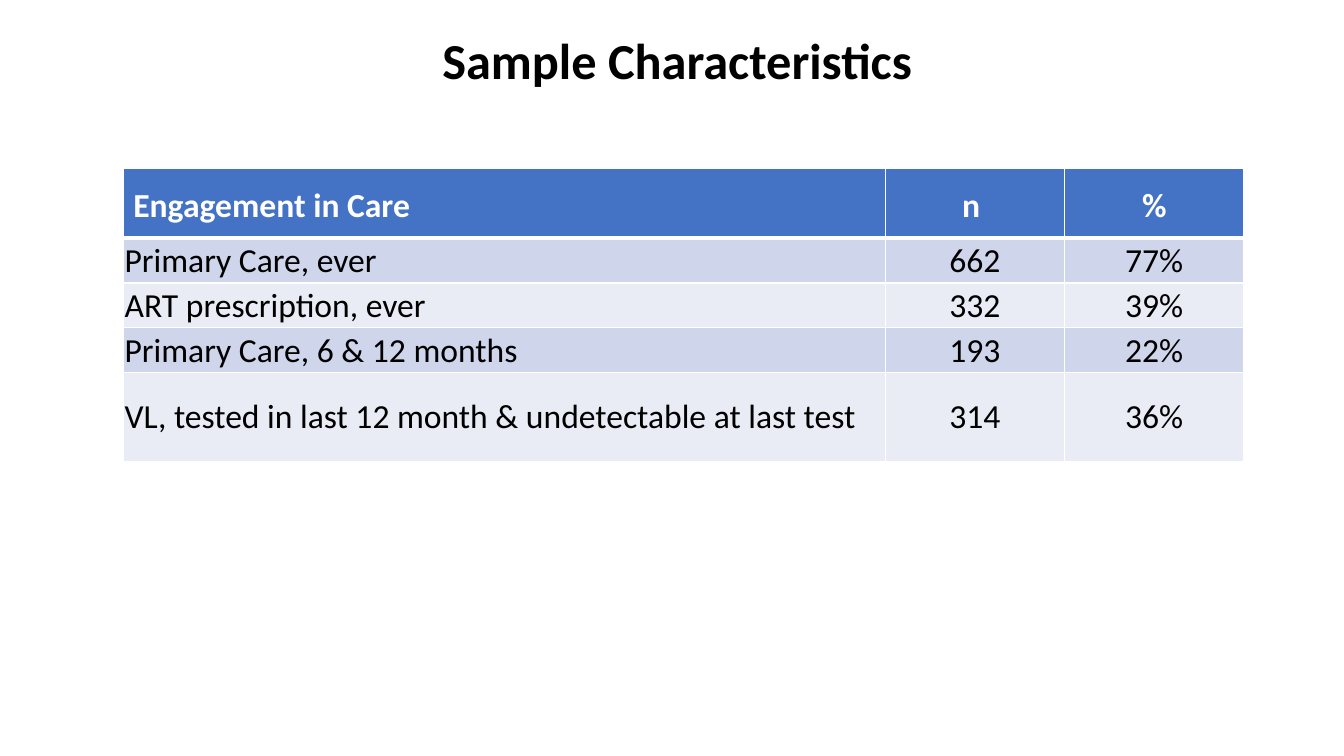
from dataclasses import dataclass

import lxml.etree
import pptx
import pptx.dml.color
import pptx.enum.text
import pptx.oxml.ns
import pptx.util

Cm = pptx.util.Cm
Pt = pptx.util.Pt
ALIGN = pptx.enum.text.PP_ALIGN
MIDDLE = pptx.enum.text.MSO_ANCHOR.MIDDLE

FONT = "Calibri"
BLACK, WHITE = "000000", "FFFFFF"


@dataclass(frozen=True)
class RowStyle:
    fill: str
    color: str
    bold: bool
    side_margin: float
    top_margin: float
    line_spacing: float
    bottom_border: float


@dataclass(frozen=True)
class TableRow:
    texts: tuple[str, str, str]
    height: float
    style: RowStyle


HEADER = RowStyle("4472C4", WHITE, True, 0.25, 0, 1.15, 3)
DARK_BAND = RowStyle("CFD5EA", BLACK, False, 0.03, 0.03, 1, 1)
LIGHT_BAND = RowStyle("E9EBF5", BLACK, False, 0.03, 0.03, 1, 1)

COLUMN_WIDTHS = (19.2, 4.52, 4.52)
ROWS = (
    TableRow(("Engagement in Care", "n ", "%"), 1.75, HEADER),
    TableRow(("Primary Care, ever", "662", "77%"), 1.13, DARK_BAND),
    TableRow(("ART prescription, ever", "332", "39%"), 1.13, LIGHT_BAND),
    TableRow(("Primary Care, 6 & 12 months", "193", "22%"), 1.13, DARK_BAND),
    TableRow(("VL, tested in last 12 month & undetectable at last test", "314", "36%"),
             2.24, LIGHT_BAND),
)


def rgb(color: str) -> pptx.dml.color.RGBColor:
    return pptx.dml.color.RGBColor.from_string(color)


def add_run(paragraph, text: str, size: float, color: str, bold: bool) -> None:
    run = paragraph.add_run()
    run.text = text
    run.font.name = FONT
    run.font.size = Pt(size)
    run.font.bold = bold
    run.font.color.rgb = rgb(color)


def add_border(cell, side: str, width: float) -> None:
    qn = pptx.oxml.ns.qn
    properties = cell._tc.get_or_add_tcPr()
    line = lxml.etree.SubElement(properties, qn(f"a:ln{side}"), w=str(Pt(width)))
    fill = lxml.etree.SubElement(line, qn("a:solidFill"))
    lxml.etree.SubElement(fill, qn("a:srgbClr"), val=WHITE)


def fill_cell(cell, text: str, style: RowStyle, alignment) -> None:
    for side in "LRT":
        add_border(cell, side, 1)
    add_border(cell, "B", style.bottom_border)
    cell.fill.solid()
    cell.fill.fore_color.rgb = rgb(style.fill)
    cell.vertical_anchor = MIDDLE
    cell.margin_left = cell.margin_right = Cm(style.side_margin)
    cell.margin_top = Cm(style.top_margin)
    cell.margin_bottom = 0
    paragraph = cell.text_frame.paragraphs[0]
    paragraph.alignment = alignment
    paragraph.line_spacing = style.line_spacing
    add_run(paragraph, text, 24, style.color, style.bold)


def add_title(slide, text: str) -> None:
    shape = slide.shapes.add_textbox(Cm(0.84), 0, Cm(32.46), Cm(3.18))
    frame = shape.text_frame
    frame.word_wrap = True
    frame.vertical_anchor = MIDDLE
    paragraph = frame.paragraphs[0]
    paragraph.alignment = ALIGN.CENTER
    paragraph.line_spacing = 0.9
    add_run(paragraph, text, 36, BLACK, True)


def add_care_table(slide) -> None:
    width = Cm(sum(COLUMN_WIDTHS))
    height = Cm(sum(row.height for row in ROWS))
    table = slide.shapes.add_table(
        len(ROWS), len(COLUMN_WIDTHS), Cm(3.11), Cm(4.25), width, height).table
    for column, column_width in zip(table.columns, COLUMN_WIDTHS):
        column.width = Cm(column_width)
    for row_index, row in enumerate(ROWS):
        table.rows[row_index].height = Cm(row.height)
        for column_index, text in enumerate(row.texts):
            alignment = ALIGN.CENTER if column_index else ALIGN.LEFT
            fill_cell(table.cell(row_index, column_index), text, row.style, alignment)


def main() -> None:
    presentation = pptx.Presentation()
    presentation.slide_width = Cm(33.87)
    presentation.slide_height = Cm(19.05)
    slide = presentation.slides.add_slide(presentation.slide_layouts[6])

    # Heading
    add_title(slide, "Sample Characteristics")

    # Engagement table
    add_care_table(slide)

    presentation.save("out.pptx")


if __name__ == "__main__":
    main()
